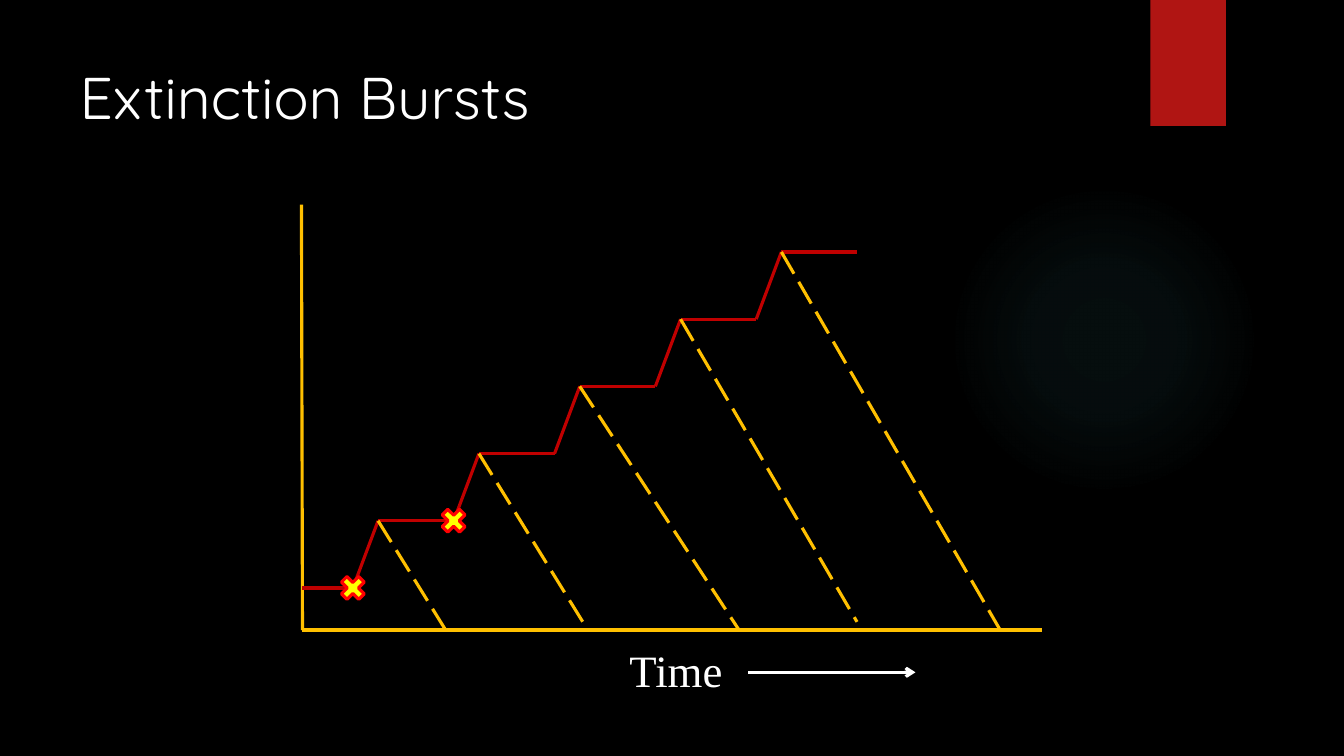
from lxml import etree
from pptx import Presentation
from pptx.dml.color import RGBColor
from pptx.enum.dml import MSO_LINE
from pptx.enum.shapes import MSO_CONNECTOR, MSO_SHAPE
from pptx.enum.text import MSO_ANCHOR, PP_ALIGN
from pptx.oxml import parse_xml
from pptx.oxml.ns import nsdecls, qn
from pptx.util import Inches, Pt

STRAIGHT = MSO_CONNECTOR.STRAIGHT
LONG_DASH = MSO_LINE.LONG_DASH
OVAL, RECT, CROSS = MSO_SHAPE.OVAL, MSO_SHAPE.RECTANGLE, MSO_SHAPE.MATH_MULTIPLY
TOP, LEFT, CENTER = MSO_ANCHOR.TOP, PP_ALIGN.LEFT, PP_ALIGN.CENTER

BLACK = RGBColor(0x00, 0x00, 0x00)
WHITE = RGBColor(0xFF, 0xFF, 0xFF)
GOLD = RGBColor(0xFF, 0xC0, 0x00)
DARK_RED = RGBColor(0xC0, 0x00, 0x00)
RED = RGBColor(0xFF, 0x00, 0x00)
YELLOW = RGBColor(0xFF, 0xFF, 0x00)
TAB_RED = RGBColor(0xB0, 0x15, 0x13)
GLOW = RGBColor(0x50, 0xB9, 0xC1)

TITLE = "Extinction Bursts"
AXIS_LABEL = "Time"
GLOW_STOPS = [(0, 7), (36, 6), (69, 0)]
ORIGIN = (3, 6.25)
AXIS_ENDS = [(2.99, 2.03), (10.33, 6.25)]
TIME_ARROW = [(7.42, 6.67), (9.08, 6.67)]
STEPS = 6
TOP_LEVEL, RISE = 2.5, 2 / 3
FIRST_EDGE, TREAD, RAMP = 3.5, 0.75, 0.25
BURST_ENDS = [(4.42, 6.25), (5.83, 6.25), (7.33, 6.25), (8.5, 6.17), (9.92, 6.25)]
MARKED_STEPS = [0, 1]
MARK = 0.33


def write(tf, text, size, font, color, align=LEFT):
    """Put one formatted line of text in a text frame."""
    tf.word_wrap = True
    tf.vertical_anchor = TOP
    p = tf.paragraphs[0]
    p.alignment = align
    r = p.add_run()
    r.text = text
    r.font.size, r.font.name, r.font.color.rgb = Pt(size), font, color
    r.font.bold = False


def add_line(s, start, end, color, dash=None, arrow=False):
    """Draw a straight line between two points."""
    c = s.shapes.add_connector(STRAIGHT, *map(Inches, start + end))
    c.line.color.rgb, c.line.width = color, Pt(2.25)
    if dash:
        c.line.dash_style = dash
    if arrow:
        etree.SubElement(c.line._get_or_add_ln(), qn("a:tailEnd"), type="arrow")
    etree.SubElement(c._element.spPr, qn("a:effectLst"))


def add_shape(s, kind, box, fill, line=None):
    """Draw a filled preset shape."""
    sp = s.shapes.add_shape(kind, *map(Inches, box))
    sp.shadow.inherit = False
    sp.fill.solid()
    sp.fill.fore_color.rgb = fill
    if line:
        sp.line.color.rgb, sp.line.width = line, Pt(2.25)
    else:
        sp.line.fill.background()
    return sp


def add_glow(s):
    """Draw the faint round glow at the right."""
    sp = add_shape(s, OVAL, (9.41, 1.83, 3.08, 3.08), GLOW)
    stops = "".join(
        f'<a:gs pos="{pos * 1000}"><a:srgbClr val="{GLOW}">'
        f'<a:alpha val="{alpha * 1000}"/></a:srgbClr></a:gs>'
        for pos, alpha in GLOW_STOPS)
    grad = parse_xml(
        f'<a:gradFill {nsdecls("a")}><a:gsLst>{stops}</a:gsLst><a:path path="circle">'
        '<a:fillToRect l="50000" t="50000" r="50000" b="50000"/></a:path></a:gradFill>')
    spPr = sp._element.spPr
    spPr.replace(spPr.find(qn("a:solidFill")), grad)


def add_staircase(s):
    """Draw the rising steps, the dashed bursts and the cross marks."""
    edges = [(FIRST_EDGE + i, TOP_LEVEL + RISE * (STEPS - 1 - i)) for i in range(STEPS)]
    starts = [(max(x - TREAD, ORIGIN[0]), y) for x, y in edges]
    for start, edge in zip(starts, edges):
        add_line(s, start, edge, DARK_RED)
    for edge, start in zip(edges, starts[1:]):
        add_line(s, edge, start, DARK_RED)
    for start, end in zip(starts[1:], BURST_ENDS):
        add_line(s, start, end, GOLD, dash=LONG_DASH)
    for i in MARKED_STEPS:
        x, y = edges[i]
        add_shape(s, CROSS, (x - MARK / 2, y - MARK / 2, MARK, MARK), YELLOW, RED)


def main():
    """Build the slide and save it."""
    prs = Presentation()
    prs.slide_width, prs.slide_height = Inches(13.33), Inches(7.5)
    s = prs.slides.add_slide(prs.slide_layouts[5])
    s.background.fill.solid()
    s.background.fill.fore_color.rgb = BLACK

    add_glow(s)
    add_shape(s, RECT, (11.41, 0, 0.75, 1.25), TAB_RED)

    title = s.shapes.title
    title.left, title.top, title.width, title.height = map(Inches, (0.69, 0.55, 10.29, 0.86))
    write(title.text_frame, TITLE, 42, "Quicksand", WHITE)

    for end in AXIS_ENDS:
        add_line(s, end, ORIGIN, GOLD)
    label = s.shapes.add_textbox(*map(Inches, (4.83, 6.33, 3.75, 0.64)))
    write(label.text_frame, AXIS_LABEL, 32, "Times New Roman", WHITE, align=CENTER)
    add_line(s, *TIME_ARROW, WHITE, arrow=True)
    add_staircase(s)
    prs.save("out.pptx")


if __name__ == "__main__":
    main()
